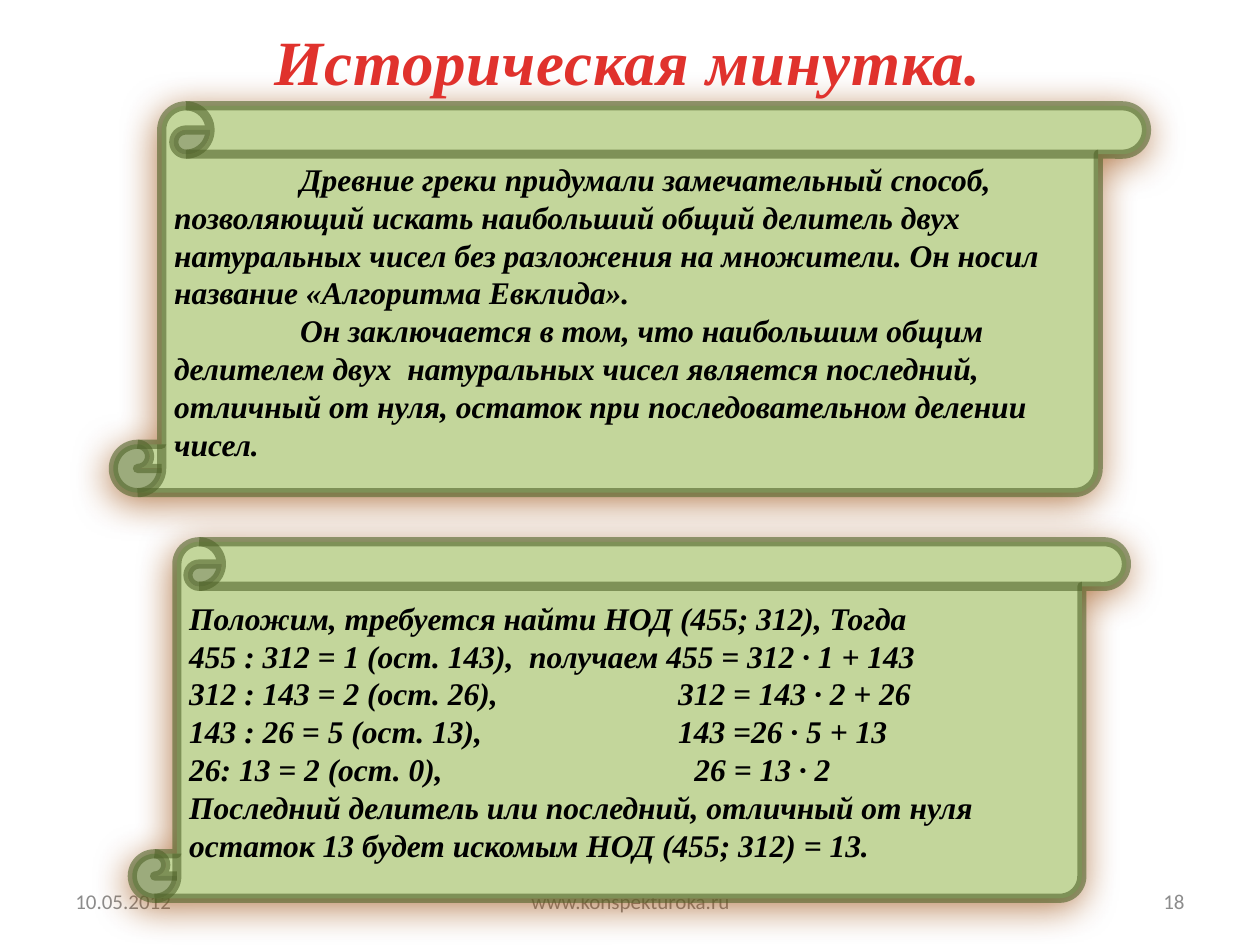
from lxml import etree
from pptx import Presentation
from pptx.dml.color import RGBColor
from pptx.enum import dml, shapes, text
from pptx.oxml.ns import qn
from pptx.util import Inches, Pt

HUES = {"leaf": "C3D69B", "edge": "4F6228", "glow": "984807", "ink": "000000",
        "grey": "8C8C8C", "red": "E0322D", "dark": "A2201C"}
SERIF = {"name": "Times New Roman", "bold": True, "italic": True}
BODY = {**SERIF, "size": Pt(18)}
HEAD = {**SERIF, "size": Pt(36)}
FOOT = {"name": "Calibri", "size": Pt(12)}
LEFT, MID, RIGHT = text.PP_ALIGN.LEFT, text.PP_ALIGN.CENTER, text.PP_ALIGN.RIGHT


def tint(key):
    return RGBColor.from_string(HUES[key])


def style(font, look, key=None):
    """Apply a dict of font values and, if given, a colour."""
    for name, val in look.items():
        setattr(font, name, val)
    if key:
        font.color.rgb = tint(key)


prs = Presentation()
prs.slide_width, prs.slide_height = Inches(10), Inches(7.5)
slide = prs.slides.add_slide(prs.slide_layouts[5])

# Each scroll: place, then lines as (text, tab stop in inches)
scrolls = [
    ((0.9, 0.84, 8.2, 3.07), [
        ("\tДревние греки придумали замечательный способ, позволяющий искать "
         "наибольший общий делитель двух натуральных чисел без разложения на "
         "множители. Он носил название «Алгоритма Евклида».", 1),
        ("\tОн заключается в том, что наибольшим общим делителем двух  "
         "натуральных чисел является последний, отличный от нуля, остаток при "
         "последовательном делении чисел.", 1)]),
    ((1.05, 4.3, 7.89, 2.83), [
        ("Положим, требуется найти НОД (455; 312), Тогда", None),
        ("455 : 312 = 1 (ост. 143),  получаем 455 = 312 ∙ 1 + 143", None),
        ("312 : 143 = 2 (ост. 26),\t312 = 143 ∙ 2 + 26", 3.88),
        ("143 : 26 = 5 (ост. 13),\t143 =26 ∙ 5 + 13", 3.88),
        ("26: 13 = 2 (ост. 0),\t26 = 13 ∙ 2", 4.01),
        ("Последний делитель или последний, отличный от нуля остаток 13 "
         "будет искомым НОД (455; 312) = 13.", None)]),
]
made = []
for place, lines in scrolls:
    roll = slide.shapes.add_shape(shapes.MSO_SHAPE.VERTICAL_SCROLL,
                                  *map(Inches, place))
    made.append(roll)
    roll.fill.solid()
    roll.fill.fore_color.rgb = tint("leaf")
    roll.line.width = Pt(5.25)
    roll.line.color.rgb = tint("edge")
    hue = roll.line._ln.find(".//" + qn("a:srgbClr"))
    etree.SubElement(hue, qn("a:alpha"), val="59000")

    roll.shadow.inherit = False
    fx = roll._element.spPr.find(qn("a:effectLst"))
    glow = etree.SubElement(fx, qn("a:outerShdw"), blurRad=str(Pt(22)),
                            dist=str(Pt(4)), dir=str(110 * 60000),
                            algn="ctr", rotWithShape="0")
    hue = etree.SubElement(glow, qn("a:srgbClr"), val=HUES["glow"])
    etree.SubElement(hue, qn("a:alpha"), val="71000")

    frame = roll.text_frame
    frame.word_wrap = True
    frame.vertical_anchor = text.MSO_ANCHOR.MIDDLE
    for i, (words, stop) in enumerate(lines):
        para = frame.add_paragraph() if i else frame.paragraphs[0]
        para.alignment = LEFT
        if stop:
            tabs = etree.SubElement(para._p.get_or_add_pPr(), qn("a:tabLst"))
            etree.SubElement(tabs, qn("a:tab"), pos=str(Inches(stop)), algn="l")
        run = para.add_run()
        run.text = words
        style(run.font, BODY, "ink")

for words, left, width, align in [("10.05.2012", 0.5, 2.33, LEFT),
                                  ("18", 7.17, 2.33, RIGHT),
                                  ("www.konspekturoka.ru", 3.42, 3.17, MID)]:
    box = slide.shapes.add_textbox(Inches(left), Inches(6.95),
                                   Inches(width), Inches(0.4))
    frame = box.text_frame
    frame.word_wrap = True
    frame.vertical_anchor = text.MSO_ANCHOR.MIDDLE
    para = frame.paragraphs[0]
    para.alignment = align
    run = para.add_run()
    run.text = words
    style(run.font, FOOT, "grey")

title = slide.shapes.title
title.left, title.top, title.width, title.height = map(
    Inches, (2.08, 0.13, 5.85, 0.71))
frame = title.text_frame
frame.word_wrap = False
frame.auto_size = text.MSO_AUTO_SIZE.SHAPE_TO_FIT_TEXT
frame.vertical_anchor = text.MSO_ANCHOR.TOP
para = frame.paragraphs[0]
para.alignment = LEFT
run = para.add_run()
run.text = "Историческая минутка."
style(run.font, HEAD)
run.font.fill.gradient()
run.font.fill.gradient_angle = 270
for stop, (spot, key) in zip(run.font.fill.gradient_stops,
                             [(0.25, "red"), (1, "dark")]):
    stop.position = spot
    stop.color.rgb = tint(key)
run._r.get_or_add_rPr().set("spc", "50")

# The title lies over the first scroll, the second scroll over the footer
tree = title._element.getparent()
for item in (title, made[1]):
    tree.append(item._element)

prs.save("out.pptx")
